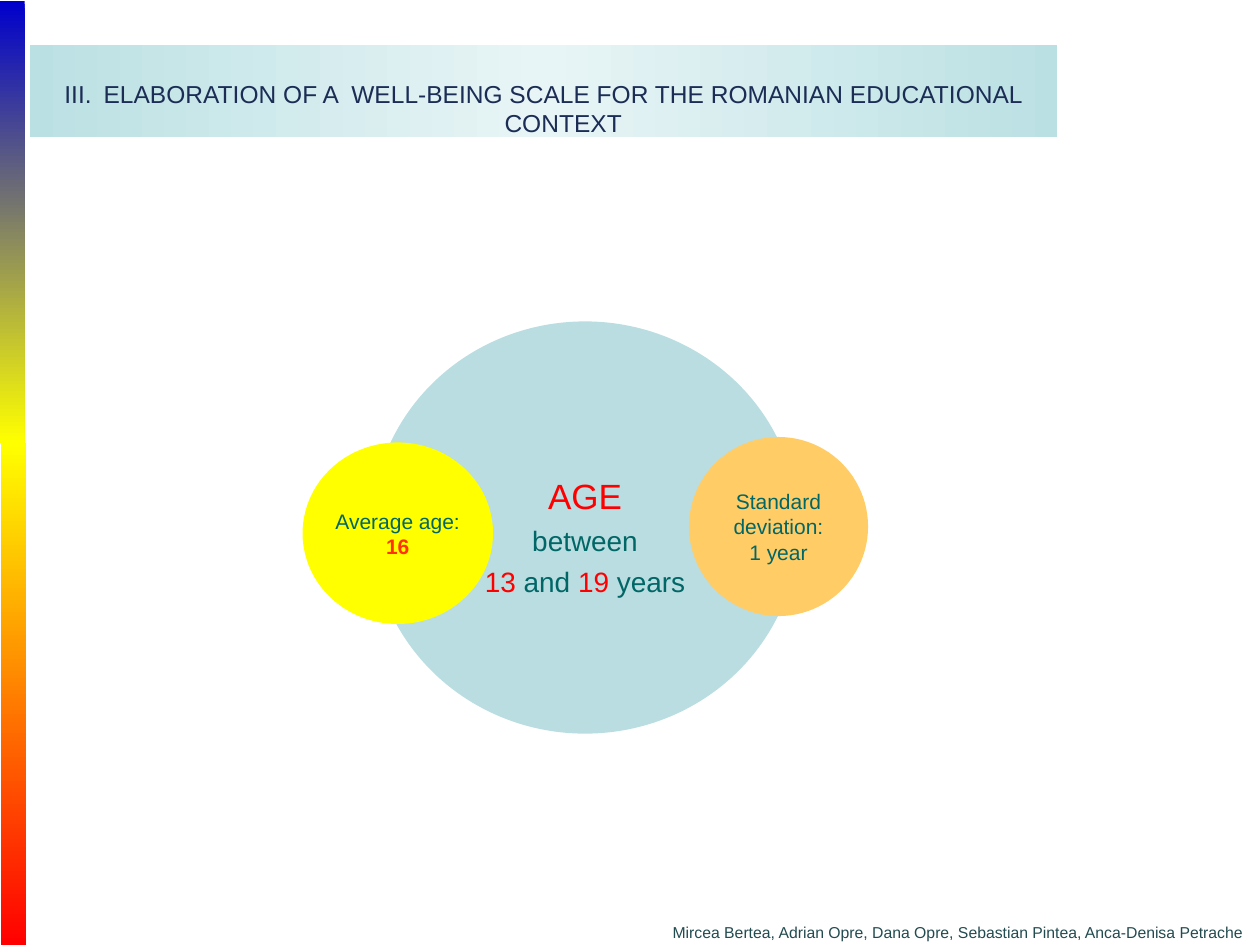
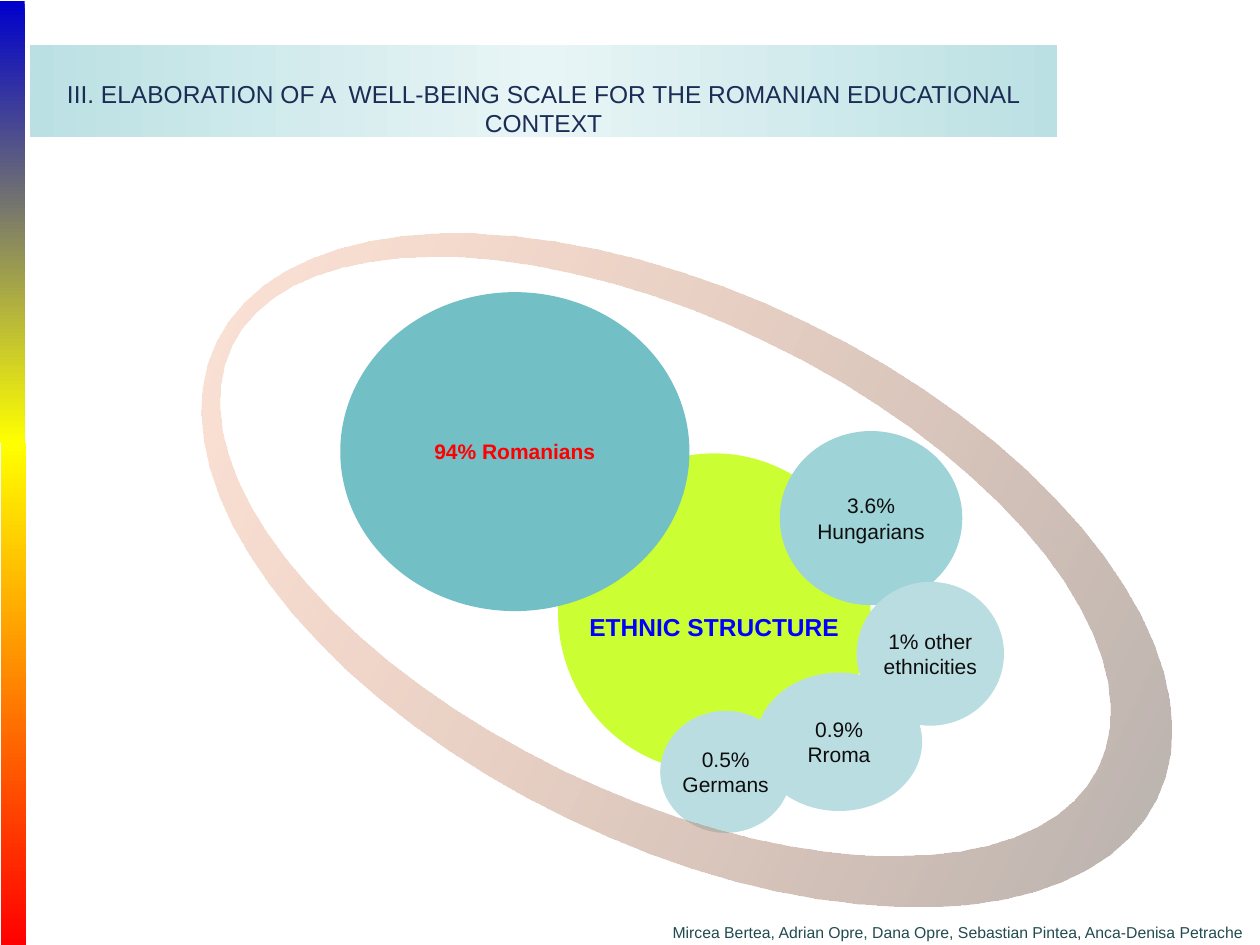
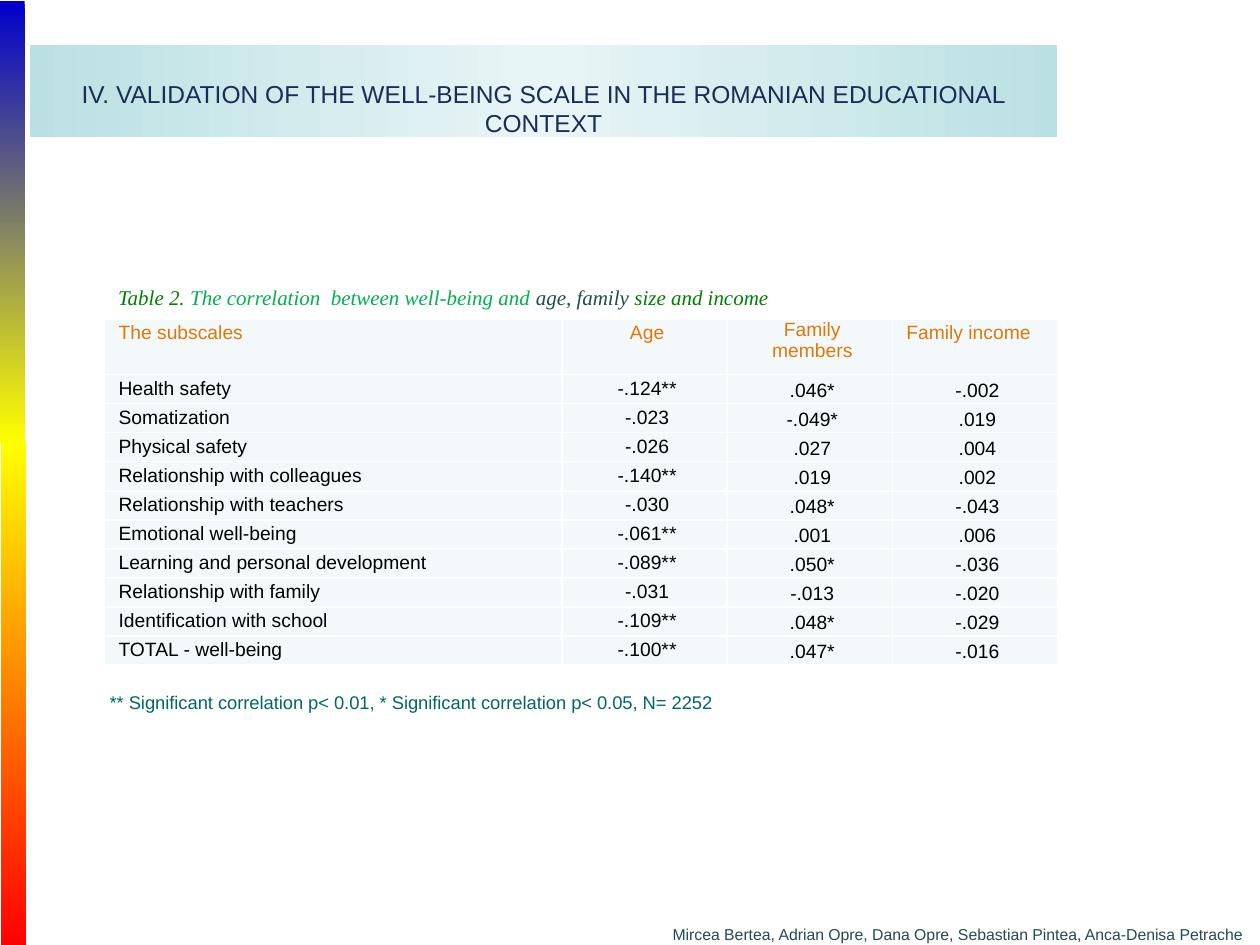
from dataclasses import dataclass
from math import cos, pi, sin

from lxml.etree import SubElement
from pptx import Presentation
from pptx.dml.color import RGBColor as Rgb
from pptx.enum.shapes import MSO_SHAPE as Preset
from pptx.enum.text import MSO_ANCHOR as Anchor, PP_ALIGN as Align
from pptx.oxml.ns import qn
from pptx.util import Cm, Pt


@dataclass(frozen=True)
class Theme:
    sans: str = "Arial"
    serif: str = "Times New Roman"
    navy: str = "1B2D55"
    slate: str = "224B50"
    teal: str = "006666"
    red: str = "FF0000"
    scarlet: str = "FF3300"
    blue: str = "0000FF"
    royal: str = "0000CC"
    green: str = "008000"
    emerald: str = "00B050"
    amber: str = "DF7807"
    black: str = "000000"
    ink: str = "0D0D0D"
    white: str = "FFFFFF"
    yellow: str = "FFFF00"
    lime: str = "CCFF33"
    orange: str = "FFCC66"
    peach: str = "FF9966"
    gray: str = "808080"
    sea: str = "72BFC5"
    lagoon: str = "9ED3D7"
    mist: str = "BADDE1"
    band_edge: str = "BBE0E3"
    band_middle: str = "E8F5F6"
    cell: str = "F3F9FA"
    title_size: float = 14
    lead_size: float = 20
    range_size: float = 16
    label_size: float = 12
    table_size: float = 11
    note_size: float = 10.5
    footer_size: float = 9


THEME = Theme()
AUTHORS = "Mircea Bertea, Adrian Opre, Dana Opre, Sebastian Pintea, Anca-Denisa Petrache"
SCALE_TITLE = "ELABORATION OF A  WELL-BEING SCALE FOR THE ROMANIAN EDUCATIONAL CONTEXT"
WIDE_INSETS = (0.25, 0.13, 0.25, 0.13)
TIGHT_INSETS = (0.04, 0.13, 0.04, 0.13)

HEADINGS = ("The subscales", "Age", "Family members", "Family income")
CORRELATIONS = (
    ("Health safety", "-.124**", ".046*", "-.002"),
    ("Somatization", "-.023", "-.049*", ".019"),
    ("Physical safety", "-.026", ".027", ".004"),
    ("Relationship with colleagues", "-.140**", ".019", ".002"),
    ("Relationship with teachers", "-.030", ".048*", "-.043"),
    ("Emotional well-being", "-.061**", ".001", ".006"),
    ("Learning and personal development", "-.089**", ".050*", "-.036"),
    ("Relationship with family", "-.031", "-.013", "-.020"),
    ("Identification with school", "-.109**", ".048*", "-.029"),
    ("TOTAL - well-being", "-.100**", ".047*", "-.016"),
)


def write(frame, *lines, size=THEME.label_size, color=THEME.ink, font=THEME.sans,
          bold=False, italic=False, align=Align.LEFT, spacing=None, before=0, number=None):
    for index, line in enumerate(lines):
        paragraph = frame.paragraphs[0] if index == 0 else frame.add_paragraph()
        paragraph.alignment = align
        if spacing:
            paragraph.line_spacing = spacing
        if before and index:
            paragraph.space_before = Pt(before)
        if number:
            properties = paragraph._p.get_or_add_pPr()
            properties.set("marL", str(Cm(0.79)))
            properties.set("indent", str(-Cm(0.79)))
            SubElement(properties, qn("a:buAutoNum"), type="romanUcPeriod", startAt=str(number))
        for part in [(line, {})] if isinstance(line, str) else line:
            words, changes = part
            run = paragraph.add_run()
            run.text = words
            run.font.name = font
            run.font.size = Pt(changes.get("size", size))
            run.font.bold = changes.get("bold", bold)
            run.font.italic = italic
            run.font.color.rgb = Rgb.from_string(changes.get("color", color))


def set_frame(frame, insets=WIDE_INSETS, anchor=Anchor.TOP, wrap=True):
    frame.margin_left, frame.margin_top, frame.margin_right, frame.margin_bottom = map(Cm, insets)
    frame.vertical_anchor = anchor
    frame.word_wrap = wrap
    return frame


def fill_solid(target, color):
    target.fill.solid()
    target.fill.fore_color.rgb = Rgb.from_string(color)


def fill_gradient(shape, *stops):
    shape.fill.gradient()
    shape.fill.gradient_angle = 0
    stop_list = shape._element.spPr.find(qn("a:gradFill")).find(qn("a:gsLst"))
    for default_stop in list(stop_list):
        stop_list.remove(default_stop)
    for position, color, opacity in stops:
        stop = SubElement(stop_list, qn("a:gs"), pos=str(position * 1000))
        tint = SubElement(stop, qn("a:srgbClr"), val=color)
        if opacity < 100:
            SubElement(tint, qn("a:alpha"), val=str(opacity * 1000))


def add_plain(slide, preset, *box):
    shape = slide.shapes.add_shape(preset, *map(Cm, box))
    shape.shadow.inherit = False
    shape.line.fill.background()
    return shape


def add_caption(slide, box, *lines, insets=WIDE_INSETS, anchor=Anchor.TOP, wrap=True, **style):
    frame = slide.shapes.add_textbox(*map(Cm, box)).text_frame
    write(set_frame(frame, insets, anchor, wrap), *lines, **style)


def add_bubble(slide, box, background, *lines, insets=TIGHT_INSETS, wrap=True, **style):
    bubble = add_plain(slide, Preset.OVAL, *box)
    fill_solid(bubble, background)
    frame = set_frame(bubble.text_frame, insets, Anchor.MIDDLE, wrap)
    write(frame, *lines, align=Align.CENTER, **style)


def add_side_stripe(slide, left, top, length, start, end):
    stripe = add_plain(slide, Preset.RECTANGLE, left, top, length, 0.51)
    stripe.rotation = 90
    fill_gradient(stripe, (0, start, 100), (100, end, 100))


def add_base(deck, title, number=None, footer_top=18.47):
    slide = deck.slides.add_slide(deck.slide_layouts[6])
    add_side_stripe(slide, -4.22, 4.22, 8.92, THEME.royal, THEME.yellow)
    add_side_stripe(slide, -4.8, 13.74, 10.13, THEME.yellow, THEME.red)
    band = add_plain(slide, Preset.RECTANGLE, 0.61, 0.91, 20.7, 1.85)
    fill_gradient(band, (0, THEME.band_edge, 100), (50, THEME.band_middle, 100),
                  (100, THEME.band_edge, 100))
    frame = set_frame(band.text_frame, (0.25, 0.68, 0.25, 0))
    write(frame, title, size=THEME.title_size, color=THEME.navy, align=Align.CENTER, number=number)
    add_caption(slide, (13.31, footer_top, 12.09, 0.64), AUTHORS, wrap=False,
                size=THEME.footer_size, color=THEME.slate)
    return slide


def ellipse_points(center_x, center_y, radius_x, radius_y, count=72):
    angles = (2 * pi * step / count for step in range(count))
    return [(Cm(center_x + radius_x * cos(angle)), Cm(center_y + radius_y * sin(angle)))
            for angle in angles]


def add_orbit(slide):
    outer = ellipse_points(13.83, 11.49, 10.53, 5.55)
    inner = ellipse_points(13.32, 11.43, 9.7, 4.77)[::-1]
    builder = slide.shapes.build_freeform(*outer[0], scale=1.0)
    builder.add_line_segments(outer[1:], close=True)
    builder.move_to(*inner[0])
    builder.add_line_segments(inner[1:], close=True)
    orbit = builder.convert_to_shape()
    orbit.shadow.inherit = False
    orbit.line.fill.background()
    orbit.rotation = 25.9
    fill_gradient(orbit, (0, THEME.peach, 27), (100, THEME.gray, 62))


def add_borders(cell):
    properties = cell._tc.get_or_add_tcPr()
    for side in ("L", "R", "T", "B"):
        border = SubElement(properties, qn(f"a:ln{side}"), w=str(Pt(1)))
        SubElement(SubElement(border, qn("a:solidFill")), qn("a:srgbClr"), val=THEME.white)


def add_correlation_table(slide):
    rows = (HEADINGS, *CORRELATIONS)
    header_height, body_height = Cm(1.12), Cm(5.86)
    table = slide.shapes.add_table(len(rows), len(HEADINGS), Cm(2.11), Cm(6.43), Cm(19.21),
                                   header_height + body_height).table
    table.first_row = table.horz_banding = False
    for column, width in zip(table.columns, (9.22, 3.33, 3.33, 3.33)):
        column.width = Cm(width)
    for row_index, values in enumerate(rows):
        heading = row_index == 0
        table.rows[row_index].height = header_height if heading else body_height // len(CORRELATIONS)
        for column_index, value in enumerate(values):
            cell = table.cell(row_index, column_index)
            add_borders(cell)
            fill_solid(cell, THEME.cell)
            cell.margin_left, cell.margin_right = Cm(0.28), Cm(0.18)
            cell.margin_top = cell.margin_bottom = 0
            centred = column_index in (1, 2) or (column_index == 3 and not heading)
            cell.vertical_anchor = Anchor.MIDDLE if column_index > 1 and not heading else Anchor.TOP
            write(cell.text_frame, value, size=THEME.table_size,
                  color=THEME.amber if heading else THEME.black,
                  align=Align.CENTER if centred else Align.LEFT,
                  spacing=1.0 if value == "Family members" else 1.15)


def build_age_slide(deck):
    slide = add_base(deck, SCALE_TITLE, number=3)
    red = {"color": THEME.red}
    add_bubble(slide, (7.49, 6.48, 8.61, 8.31), THEME.mist,
               [("AGE", {"color": THEME.red, "size": THEME.lead_size})],
               "between",
               [("13", red), (" and ", {}), ("19", red), (" years", {})],
               insets=(0.25, 0.49, 0.25, 0.13), wrap=False,
               size=THEME.range_size, color=THEME.teal, before=4)
    add_bubble(slide, (6.1, 8.92, 3.84, 3.66), THEME.yellow,
               "Average age:", [("16", {"color": THEME.scarlet, "bold": True})],
               wrap=False, color=THEME.teal)
    add_bubble(slide, (13.89, 8.81, 3.61, 3.61), THEME.orange,
               "Standard deviation:", "1 year", color=THEME.teal)


def build_ethnic_slide(deck):
    slide = add_base(deck, f"III. {SCALE_TITLE}")
    add_bubble(slide, (11.25, 9.14, 6.3, 6.43), THEME.lime, "ETHNIC STRUCTURE",
               insets=(0.25, 0.69, 0.25, 0.13), wrap=False,
               size=THEME.title_size, color=THEME.blue, bold=True)
    add_bubble(slide, (6.86, 5.89, 7.04, 6.43), THEME.sea, "94% Romanians",
               color=THEME.red, bold=True)
    for box, background, group in (
        ((15.24, 13.56, 3.35, 2.79), THEME.mist, "0.9% Rroma"),
        ((15.72, 8.69, 3.68, 3.51), THEME.lagoon, "3.6% Hungarians"),
        ((13.31, 14.33, 2.64, 2.46), THEME.mist, "0.5% Germans"),
        ((17.27, 11.73, 2.97, 2.9), THEME.mist, "1% other ethnicities"),
    ):
        add_bubble(slide, box, background, group)
    add_orbit(slide)


def build_correlation_slide(deck):
    slide = add_base(deck, "IV. VALIDATION OF THE WELL-BEING SCALE IN THE ROMANIAN EDUCATIONAL CONTEXT",
                     footer_top=18.52)
    add_correlation_table(slide)
    add_caption(slide, (2.16, 13.92, 12.5, 0.46),
                "** Significant correlation p< 0.01, * Significant correlation p< 0.05, N= 2252",
                insets=(0.05, 0, 0.05, 0), anchor=Anchor.MIDDLE, wrap=False,
                size=THEME.note_size, color=THEME.teal)
    add_caption(slide, (2.13, 5.54, 18.57, 0.84),
                [("Table 2. ", {}),
                 ("The correlation  between well-being and ", {"color": THEME.emerald}),
                 ("age, family ", {"color": THEME.slate}),
                 ("size and income", {})],
                font=THEME.serif, color=THEME.green, italic=True,
                align=Align.JUSTIFY, spacing=1.15)


def main():
    deck = Presentation()
    deck.slide_width, deck.slide_height = Cm(25.4), Cm(19.05)
    build_age_slide(deck)
    build_ethnic_slide(deck)
    build_correlation_slide(deck)
    deck.save("out.pptx")


if __name__ == "__main__":
    main()
